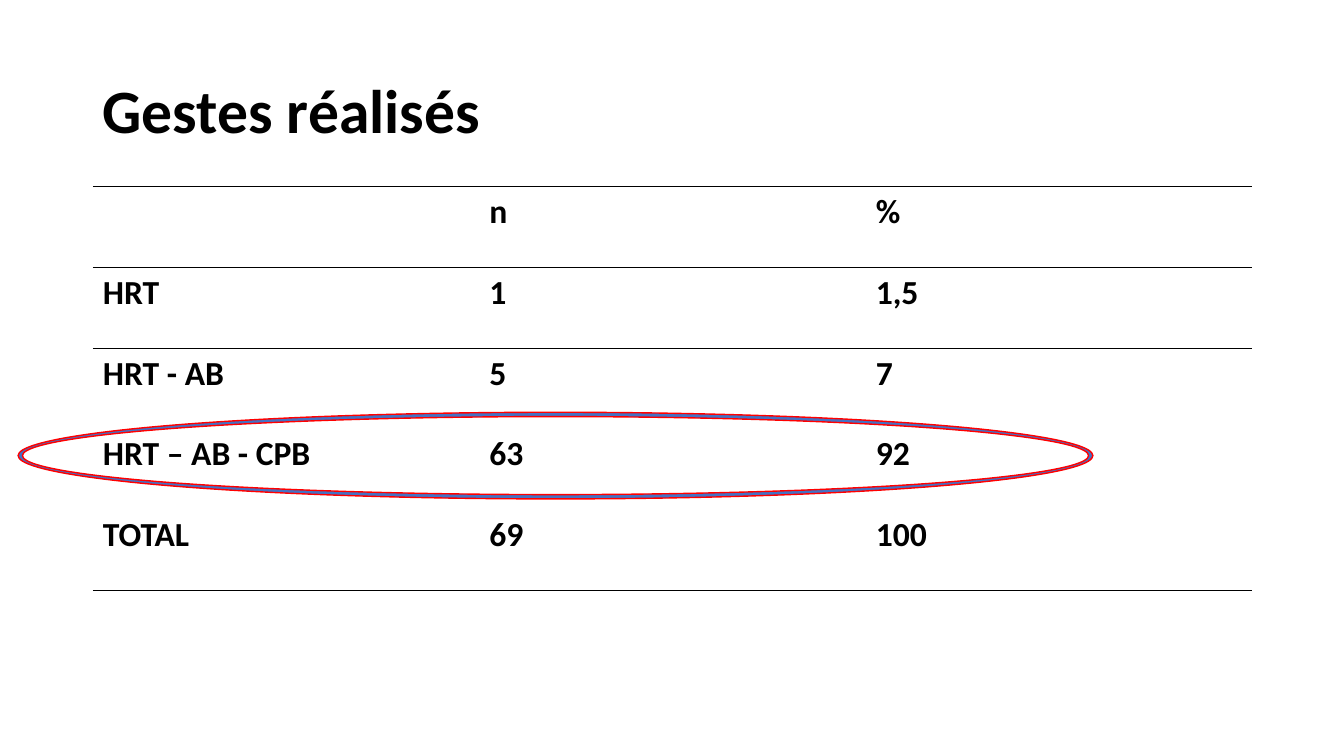
from lxml.etree import SubElement
from pptx import Presentation
from pptx.dml.color import RGBColor
from pptx.enum.shapes import MSO_SHAPE
from pptx.enum.text import MSO_ANCHOR
from pptx.oxml.ns import qn
from pptx.util import Inches, Pt

TITLE = "Gestes réalisés"
ROWS = [
    ("", "n", "%"),
    ("HRT", "1", "1,5"),
    ("HRT - AB", "5", "7"),
    ("HRT – AB - CPB", "63", "92"),
    ("TOTAL", "69", "100"),
]
RULES = {0: ("lnT", "lnB"), 1: ("lnT",), len(ROWS) - 1: ("lnB",)}
NO_GRID_STYLE = "{2D5ABB26-0587-4C30-8999-92F81FD0307C}"

FONT = "Calibri"
BLACK = RGBColor(0x00, 0x00, 0x00)
WHITE = RGBColor(0xFF, 0xFF, 0xFF)
BLUE = RGBColor(0x44, 0x72, 0xC4)
RED = RGBColor(0xFF, 0x00, 0x00)

WIDTH, HEIGHT = Inches(13.33), Inches(7.5)
LEFT, CONTENT_WIDTH = Inches(0.92), Inches(11.5)
TITLE_TOP, TITLE_HEIGHT = Inches(0.4), Inches(1.45)
TABLE_TOP, TABLE_HEIGHT = TITLE_TOP + TITLE_HEIGHT, Inches(4.01)


def style_text(para, size):
    font = para.font
    font.name, font.size, font.bold = FONT, Pt(size), True
    font.color.rgb = BLACK


def add_rule(cell, side):
    """Draw a thin black border on one side (lnT or lnB) of a cell."""
    properties = cell._tc.get_or_add_tcPr()
    line = SubElement(properties, qn(f"a:{side}"), w=str(Pt(1)))
    fill = SubElement(line, qn("a:solidFill"))
    SubElement(fill, qn("a:srgbClr"), val=str(BLACK))


def add_title(page):
    box = page.shapes.add_textbox(LEFT, TITLE_TOP, CONTENT_WIDTH, TITLE_HEIGHT)
    frame = box.text_frame
    frame.word_wrap = True
    frame.vertical_anchor = MSO_ANCHOR.MIDDLE
    para = frame.paragraphs[0]
    para.text = TITLE
    para.line_spacing = 0.9
    style_text(para, 44)


def add_results(page):
    frame = page.shapes.add_table(
        len(ROWS), len(ROWS[0]), LEFT, TABLE_TOP, CONTENT_WIDTH, TABLE_HEIGHT)
    table = frame.table
    table.first_row = table.horz_banding = False
    table._tbl.tblPr.find(qn("a:tableStyleId")).text = NO_GRID_STYLE
    for row, values in enumerate(ROWS):
        for column, value in enumerate(values):
            cell = table.cell(row, column)
            cell.text = value
            style_text(cell.text_frame.paragraphs[0], 24)
            # Borders must come before the fill in the cell properties.
            for side in RULES.get(row, ()):
                add_rule(cell, side)
            cell.fill.solid()
            cell.fill.fore_color.rgb = WHITE


def add_highlight(page):
    ring = page.shapes.add_shape(
        MSO_SHAPE.DONUT, Inches(0.18), Inches(4.09), Inches(10.66), Inches(0.86))
    ring.adjustments[0] = 0.05
    ring.shadow.inherit = False
    ring.fill.solid()
    ring.fill.fore_color.rgb = BLUE
    ring.line.color.rgb = RED
    ring.line.width = Pt(1)


def main():
    deck = Presentation()
    deck.slide_width, deck.slide_height = WIDTH, HEIGHT
    page = deck.slides.add_slide(deck.slide_layouts[6])
    add_title(page)
    add_results(page)
    add_highlight(page)
    deck.save("out.pptx")


if __name__ == "__main__":
    main()
